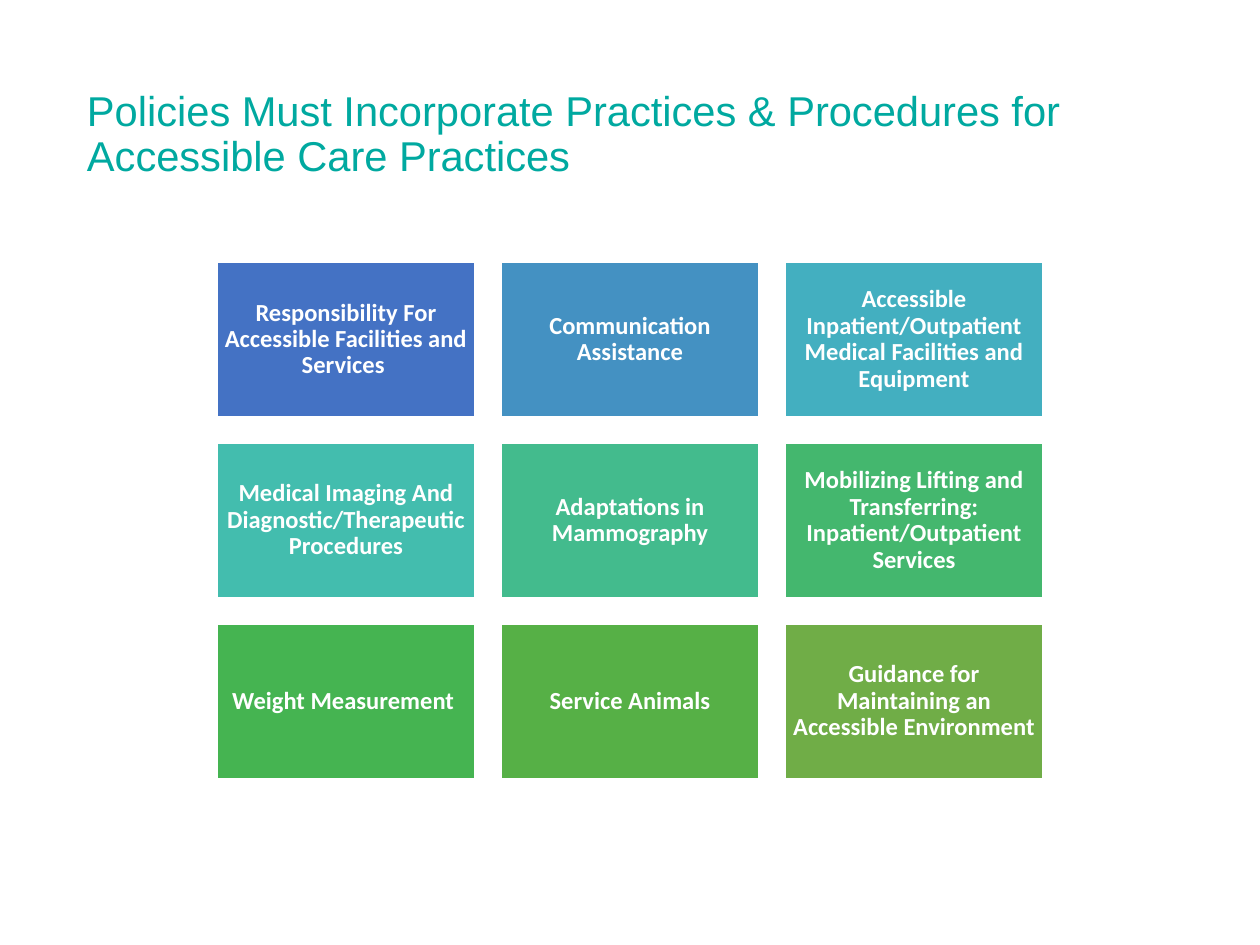
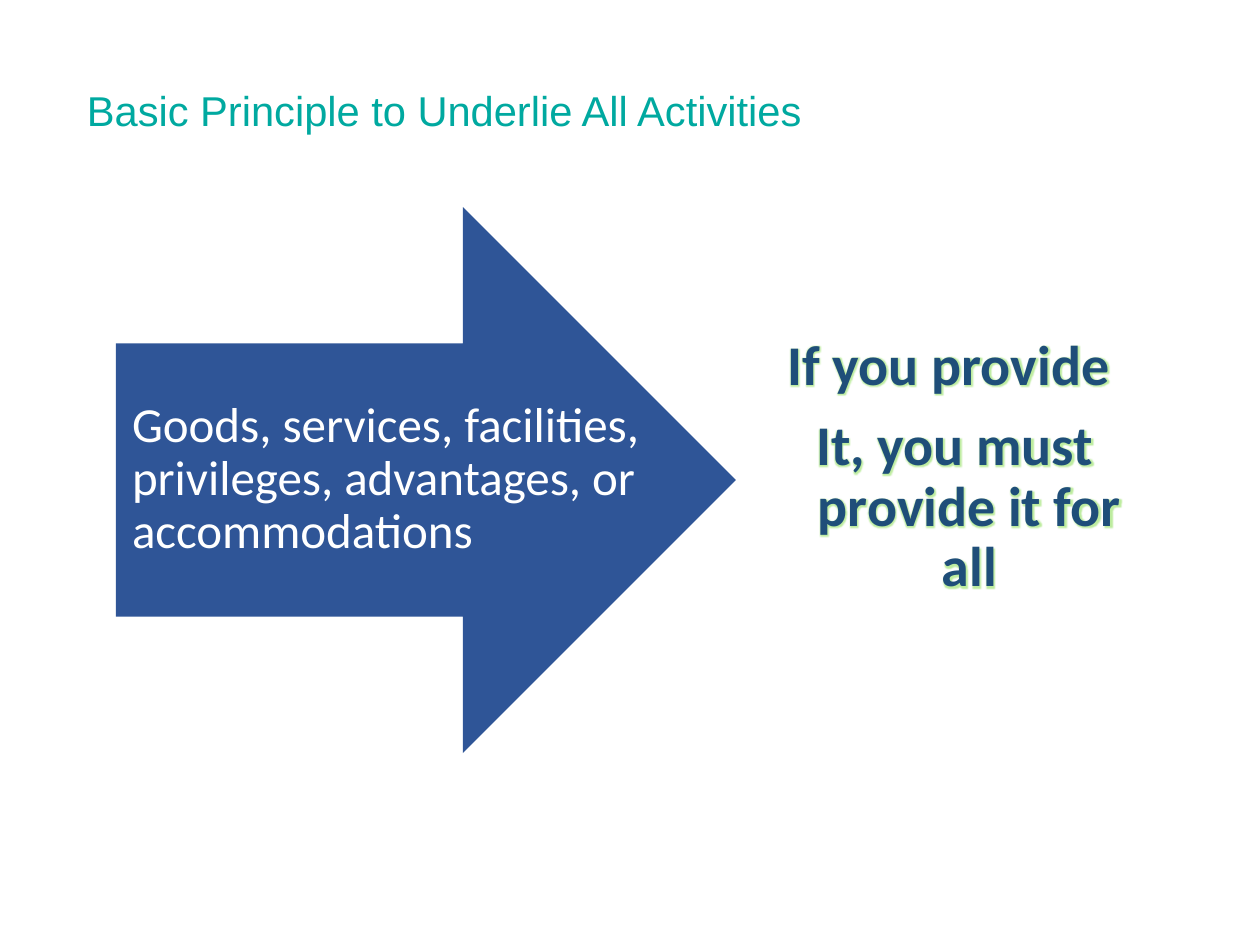
from lxml import etree
from pptx import Presentation
from pptx import util as u
from pptx.dml.color import RGBColor
from pptx.enum import shapes, text
from pptx.oxml.ns import qn

PX = 914400 / 126
TEAL, NAVY, BLUE, WHITE, GLOW = "00A9A0", "1F4E79", "2F5597", "FFFFFF", "92E060"
LEFT, CENTER = text.PP_ALIGN.LEFT, text.PP_ALIGN.CENTER
TOP, MIDDLE = text.MSO_ANCHOR.TOP, text.MSO_ANCHOR.MIDDLE

TITLE_BOX = (87, 91, 1086, 160)
GRID_BOX = (217, 262, 826, 517)
ARROW_BOX = (116, 207, 620, 546)
PRINCIPLE_BOX = (716, 173, 478, 514)

PRACTICES = [
    ("Responsibility For Accessible Facilities and Services ", "4472C4"),
    ("Communication Assistance", "4491C2"),
    ("Accessible Inpatient/Outpatient Medical Facilities and Equipment", "43AFC0"),
    ("Medical Imaging And Diagnostic/Therapeutic Procedures", "43BDAE"),
    ("Adaptations in Mammography", "43BB8D"),
    ("Mobilizing Lifting and Transferring: Inpatient/Outpatient Services", "44B76E"),
    ("Weight Measurement ", "45B451"),
    ("Service Animals", "56B046"),
    ("Guidance for Maintaining an Accessible Environment", "70AD47"),
]


def px(length):
    return u.Emu(round(length * PX))


def color(value):
    return RGBColor.from_string(value)


def add_panel(slide, kind, box, fill=None, line=None):
    panel = slide.shapes.add_shape(kind, *map(px, box))
    panel.shadow.inherit = False
    if fill:
        panel.fill.solid()
        panel.fill.fore_color.rgb = color(fill)
    else:
        panel.fill.background()
    if line:
        panel.line.color.rgb = color(line)
        panel.line.width = u.Pt(1.5)
    else:
        panel.line.fill.background()
    return panel


def add_label(slide, box):
    return slide.shapes.add_textbox(*map(px, box))


def write(shape, *paragraphs, size, ink, font="Calibri", bold=False, align=LEFT,
          anchor=TOP, insets=(0, 0, 0, 0), before=0, hang=0, glow=None):
    """Fill a shape with paragraphs; insets run left, top, right, bottom in px."""
    frame = shape.text_frame
    frame.word_wrap = True
    frame.vertical_anchor = anchor
    (frame.margin_left, frame.margin_top,
     frame.margin_right, frame.margin_bottom) = map(px, insets)
    for index, words in enumerate(paragraphs):
        paragraph = frame.add_paragraph() if index else frame.paragraphs[0]
        paragraph.alignment = align
        paragraph.line_spacing = 0.9
        if index and before:
            paragraph.space_before = u.Pt(before)
        if hang:
            properties = paragraph._p.get_or_add_pPr()
            properties.set("marL", str(px(hang)))
            properties.set("indent", str(-px(hang)))
        run = paragraph.add_run()
        run.text = words
        run.font.size = u.Pt(size)
        run.font.name = font
        run.font.bold = bold
        run.font.color.rgb = color(ink)
        if glow:
            add_glow(run, glow)


def add_glow(run, tint):
    effects = etree.Element(qn("a:effectLst"))
    halo = etree.SubElement(effects, qn("a:glow"), rad="38100")
    shade = etree.SubElement(halo, qn("a:srgbClr"), val=tint)
    etree.SubElement(shade, qn("a:alpha"), val="60000")
    run._r.rPr.find(qn("a:solidFill")).addnext(effects)


def add_titled_slide(deck, title):
    slide = deck.slides.add_slide(deck.slide_layouts[6])
    write(add_label(slide, TITLE_BOX), title, size=23.8, ink=TEAL, font="Arial")
    return slide


def add_practice_grid(slide, box, columns=3, gap=26):
    left, top, width, height = box
    rows = len(PRACTICES) // columns
    card_width = (width - gap * (columns - 1)) // columns
    card_height = (height - gap * (rows - 1)) // rows
    for index, (practice, fill) in enumerate(PRACTICES):
        row, column = divmod(index, columns)
        card = add_panel(slide, shapes.MSO_SHAPE.RECTANGLE,
                         (left + column * (card_width + gap),
                          top + row * (card_height + gap),
                          card_width, card_height), fill, WHITE)
        write(card, practice, size=14, ink=WHITE, bold=True, align=CENTER,
              anchor=MIDDLE, insets=(7, 7, 7, 7))


def add_scope_arrow(slide, box):
    left, top, width, height = box
    add_panel(slide, shapes.MSO_SHAPE.RIGHT_ARROW, box, BLUE)
    scope = add_label(slide, (left + 16, top + 150, width - 111, height - 300))
    write(scope, "Goods, services, facilities, privileges, advantages, or accommodations",
          size=28, ink=WHITE, anchor=MIDDLE)


def add_principle(slide, box):
    principle = add_panel(slide, shapes.MSO_SHAPE.OVAL, box)
    write(principle, "If you provide ", "It, you must provide it for all",
          size=32, ink=NAVY, bold=True, align=CENTER, insets=(0, 89, 0, 0),
          before=11.2, hang=29, glow=GLOW)


def main():
    deck = Presentation()
    deck.slide_width, deck.slide_height = px(1260), px(945)

    policies = add_titled_slide(
        deck, "Policies Must Incorporate Practices & Procedures for Accessible Care Practices")
    add_practice_grid(policies, GRID_BOX)

    basics = add_titled_slide(deck, "Basic Principle to Underlie All Activities")
    add_principle(basics, PRINCIPLE_BOX)
    add_scope_arrow(basics, ARROW_BOX)

    deck.save("out.pptx")


if __name__ == "__main__":
    main()
